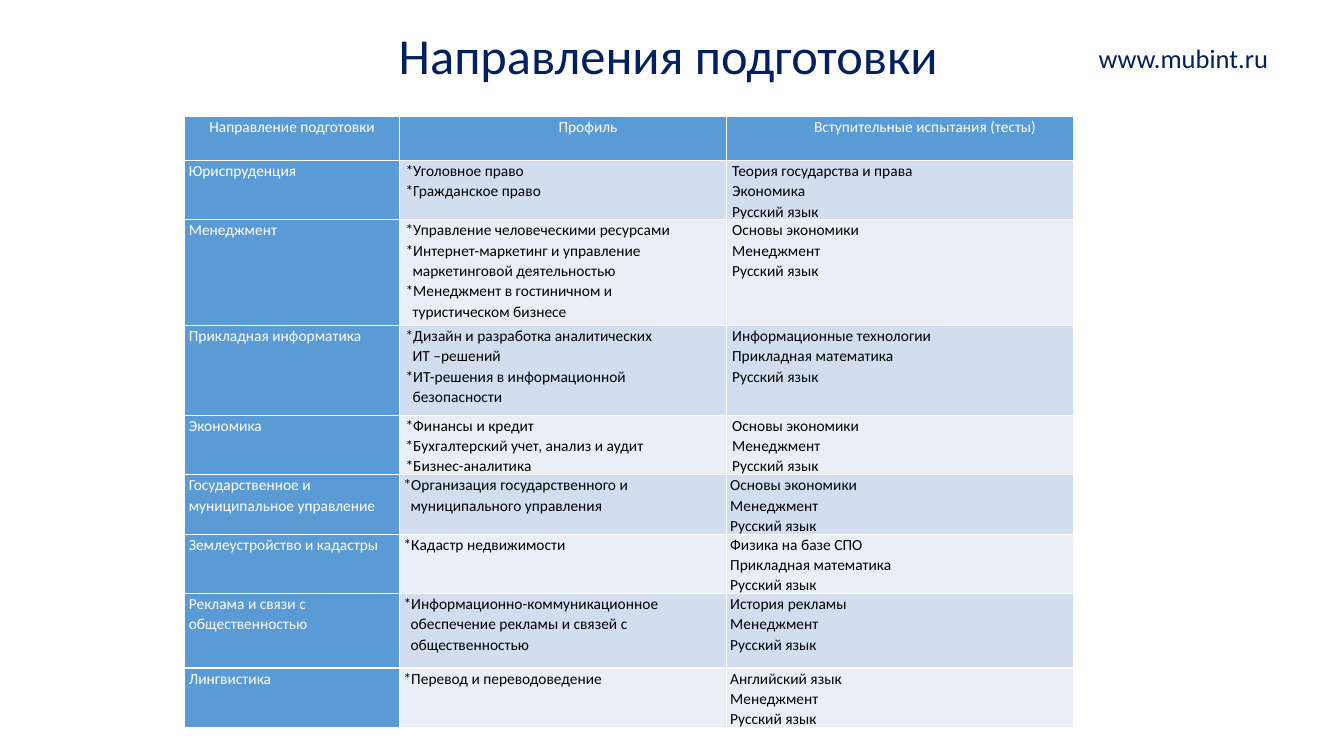
from pptx import Presentation
from pptx.dml.color import RGBColor
from pptx.enum.text import MSO_ANCHOR as Anchor, PP_ALIGN as Align
from pptx.util import Pt

FONT = "Calibri"
NAVY, BLUE, WHITE, BLACK = "002060", "5B9BD5", "FFFFFF", "000000"
BANDS = ("D2DEEF", "EAEFF7")

COLUMN_WIDTHS = (153.4, 233.3, 248.4)
ROW_HEIGHTS = (31.7, 31.7, 75.6, 64.1, 42.5, 42.5, 31.7, 53.3, 31.7)
HEADER = ("Направление подготовки", "Профиль", "Вступительные испытания (тесты)")
INDENTED_ROWS = 4
CONTINUATION_INDENT = 5

# Profile lines without an asterisk continue the line above.
PROGRAMMES = (
    ("Юриспруденция",
     "*Уголовное право\n*Гражданское право",
     "Теория государства и права\nЭкономика\nРусский язык"),
    ("Менеджмент",
     "*Управление человеческими ресурсами\n*Интернет-маркетинг и управление\n"
     "маркетинговой деятельностью\n*Менеджмент в гостиничном и\nтуристическом бизнесе",
     "Основы экономики\nМенеджмент\nРусский язык"),
    ("Прикладная информатика",
     "*Дизайн и разработка аналитических\nИТ –решений\n"
     "*ИТ-решения в информационной\nбезопасности",
     "Информационные технологии\nПрикладная математика\nРусский язык"),
    ("Экономика",
     "*Финансы и кредит\n*Бухгалтерский учет, анализ и аудит\n*Бизнес-аналитика",
     "Основы экономики\nМенеджмент\nРусский язык"),
    ("Государственное и муниципальное управление",
     "*Организация государственного и\nмуниципального управления",
     "Основы экономики\nМенеджмент\nРусский язык"),
    ("Землеустройство и кадастры",
     "*Кадастр недвижимости",
     "Физика на базе СПО\nПрикладная математика\nРусский язык"),
    ("Реклама и связи с общественностью",
     "*Информационно-коммуникационное\nобеспечение рекламы и связей с\nобщественностью",
     "История рекламы\nМенеджмент\nРусский язык"),
    ("Лингвистика",
     "*Перевод и переводоведение",
     "Английский язык\nМенеджмент\nРусский язык"),
)


def color(hex_string):
    return RGBColor.from_string(hex_string)


def format_paragraph(paragraph, size, hex_color, spacing, align=Align.LEFT, indent=0):
    properties = paragraph._p.get_or_add_pPr()
    properties.set("marL", str(Pt(indent)))
    properties.set("indent", "0")
    paragraph.alignment = align
    paragraph.line_spacing = spacing
    for run in paragraph.runs:
        run.font.name = FONT
        run.font.size = Pt(size)
        run.font.bold = False
        run.font.color.rgb = color(hex_color)


def add_heading(slide, box, text, size, spacing):
    """Place one centred navy line at the bottom of the box."""
    shape = slide.shapes.add_textbox(*map(Pt, box))
    frame = shape.text_frame
    frame.word_wrap = True
    frame.vertical_anchor = Anchor.BOTTOM
    frame.text = text
    format_paragraph(frame.paragraphs[0], size, NAVY, spacing, Align.CENTER)


def fill_cell(cell, text, fill, hex_color, align=Align.LEFT, indent=0):
    cell.margin_left = cell.margin_right = Pt(2.9)
    cell.margin_top = cell.margin_bottom = 0
    cell.fill.solid()
    cell.fill.fore_color.rgb = color(fill)
    cell.text_frame.text = text
    continues = "*" in text
    for paragraph in cell.text_frame.paragraphs:
        hangs = continues and not paragraph.text.startswith("*")
        extra = CONTINUATION_INDENT if hangs else 0
        format_paragraph(paragraph, 11, hex_color, 1.07, align, indent + extra)


def add_programme_table(slide, left, top):
    frame = slide.shapes.add_table(
        len(ROW_HEIGHTS), len(COLUMN_WIDTHS), Pt(left), Pt(top),
        Pt(sum(COLUMN_WIDTHS)), Pt(sum(ROW_HEIGHTS)))
    table = frame.table
    for column, width in zip(table.columns, COLUMN_WIDTHS):
        column.width = Pt(width)
    for row, height in zip(table.rows, ROW_HEIGHTS):
        row.height = Pt(height)

    for index, text in enumerate(HEADER):
        fill_cell(table.cell(0, index), text, BLUE, WHITE, Align.CENTER,
                  indent=36 if index else 0)

    for number, (name, profiles, exams) in enumerate(PROGRAMMES, start=1):
        band = BANDS[(number - 1) % 2]
        indent = 1.4 if number <= INDENTED_ROWS else 0
        fill_cell(table.cell(number, 0), name, BLUE, WHITE)
        fill_cell(table.cell(number, 1), profiles, band, BLACK, indent=indent)
        fill_cell(table.cell(number, 2), exams, band, BLACK, indent=indent)


def main():
    presentation = Presentation()
    presentation.slide_width, presentation.slide_height = Pt(960), Pt(540)
    slide = presentation.slides.add_slide(presentation.slide_layouts[6])
    add_heading(slide, (229, 17.3, 496.8, 47.5), "Направления подготовки", 36, 0.9)
    add_programme_table(slide, 132, 82.8)
    add_heading(slide, (736.6, 30.2, 217.4, 25.2), "www.mubint.ru", 18.9, 0.7)
    presentation.save("out.pptx")


if __name__ == "__main__":
    main()
